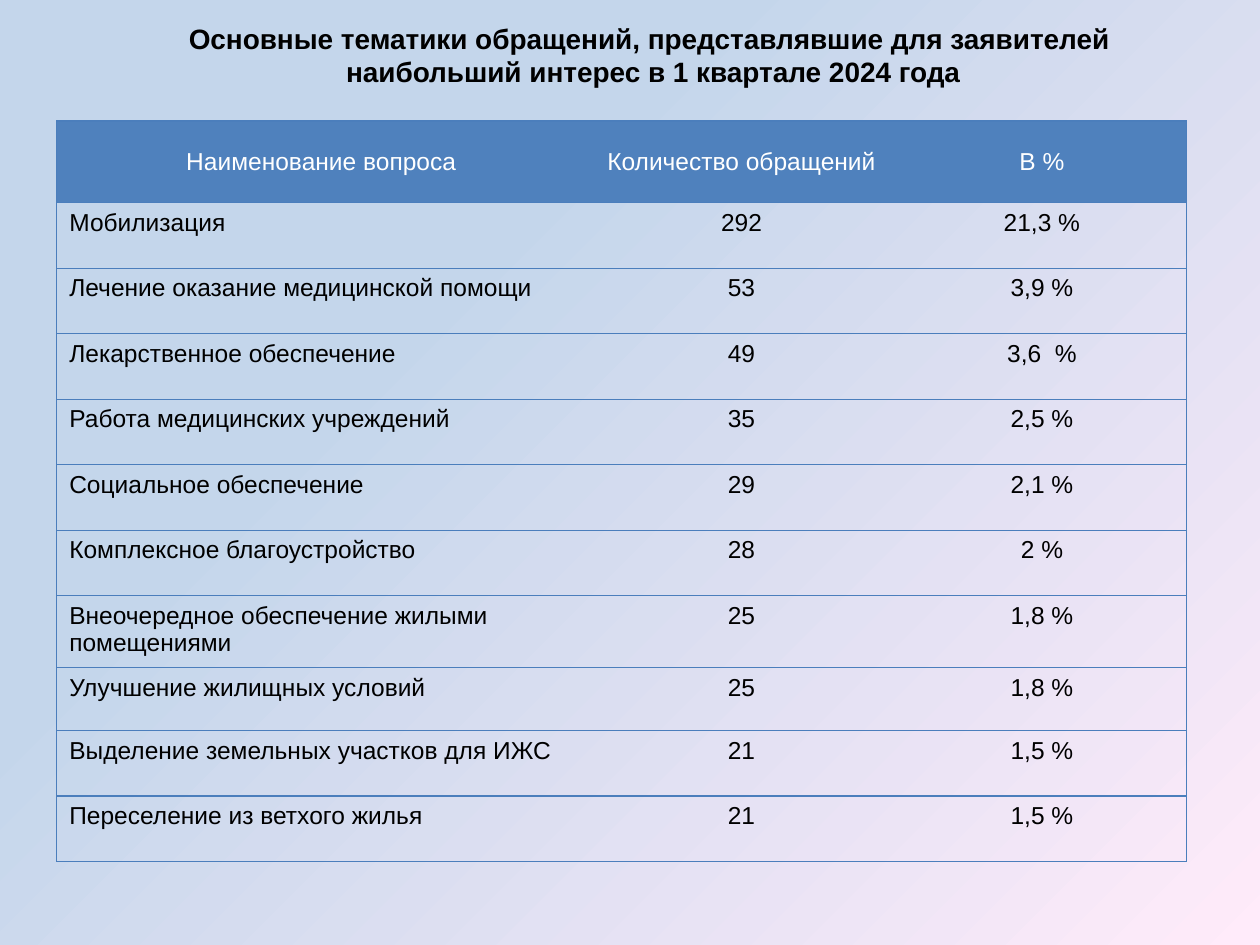
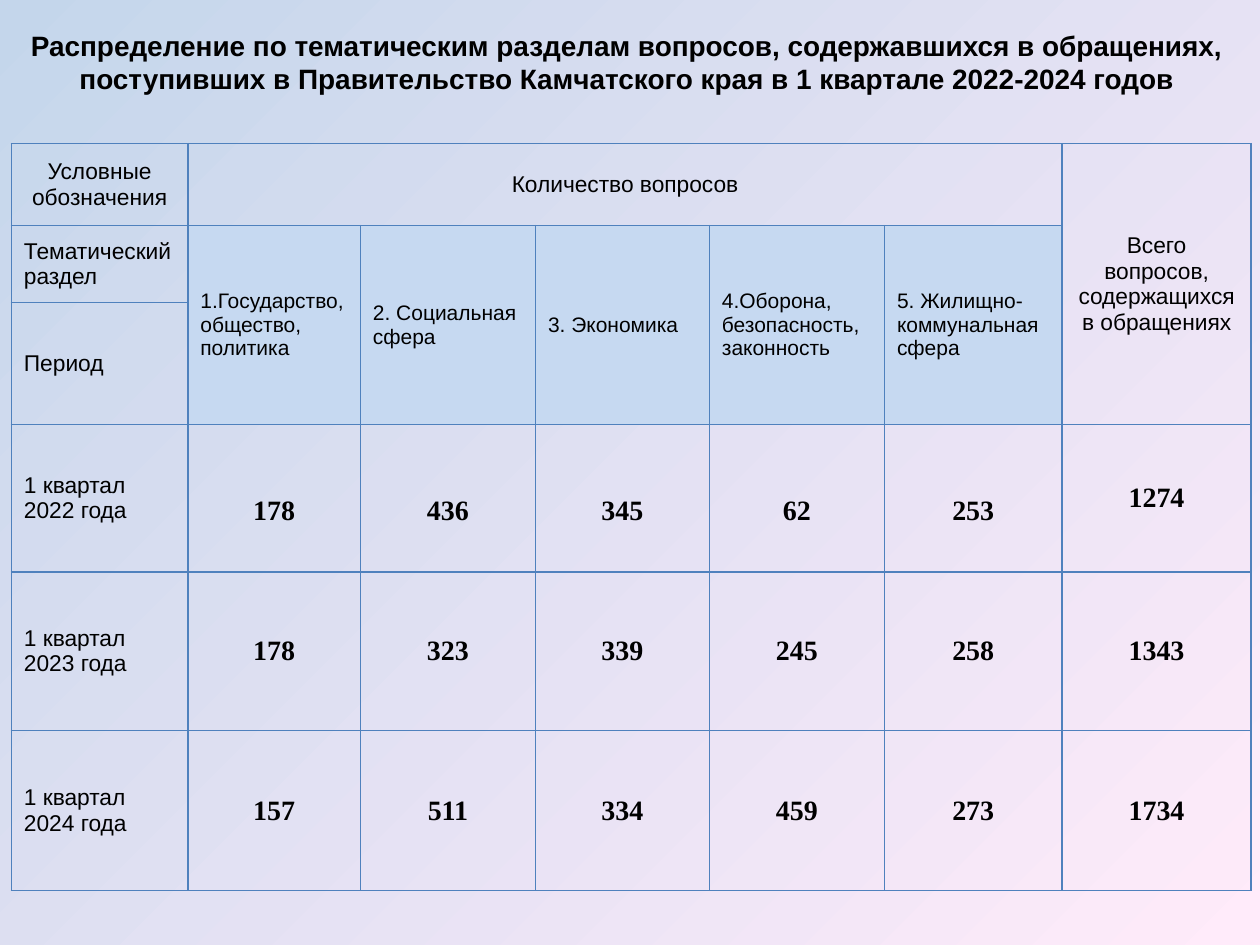
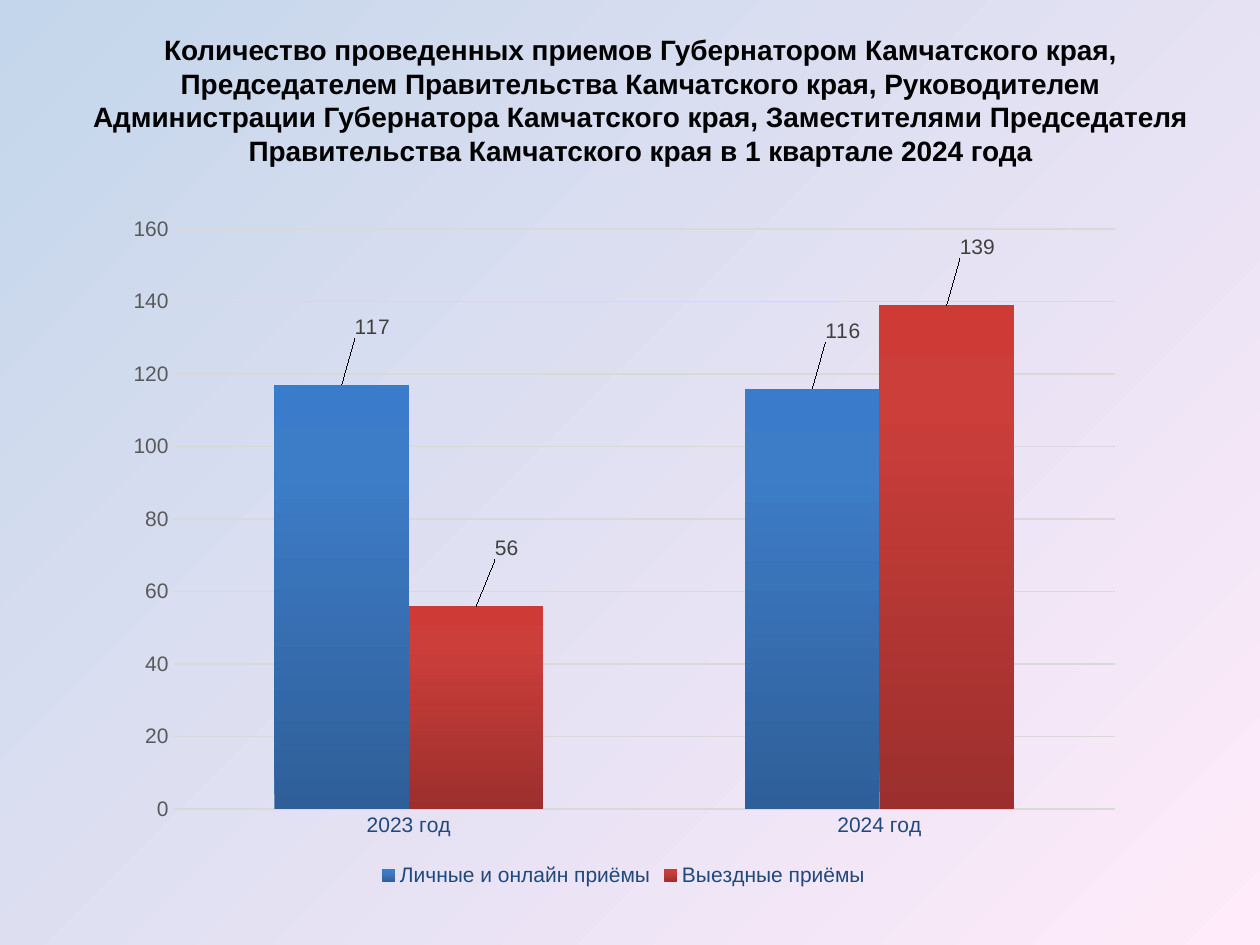
from pptx import Presentation
from pptx.chart.data import CategoryChartData
from pptx.dml.color import RGBColor
from pptx.enum.chart import XL_CHART_TYPE, XL_LABEL_POSITION, XL_LEGEND_POSITION, XL_TICK_MARK
from pptx.enum.text import MSO_ANCHOR, PP_ALIGN
from pptx.oxml import parse_xml
from pptx.oxml.ns import nsdecls, qn
from pptx.util import Inches, Pt

BLACK = RGBColor(0, 0, 0)
WHITE = RGBColor(255, 255, 255)
SKY = RGBColor(0xC4, 0xD6, 0xEB)
PINK = RGBColor(0xFF, 0xEB, 0xFA)
BLUE = RGBColor(0x4F, 0x81, 0xBD)
EDGE = RGBColor(0x4B, 0x7E, 0xBC)
PALE = RGBColor(0xC6, 0xD9, 0xF1)
NAVY = RGBColor(0x1F, 0x49, 0x7D)
GRAY = RGBColor(0x59, 0x59, 0x59)
DARK = RGBColor(0x40, 0x40, 0x40)
RULE = RGBColor(0xD9, 0xD9, 0xD9)
BLUES = [(0, RGBColor(0x2F, 0x5F, 0x99)), (80, RGBColor(0x3D, 0x7C, 0xC7)),
         (100, RGBColor(0x3A, 0x7C, 0xCB))]
REDS = [(0, RGBColor(0x9C, 0x2F, 0x2D)), (80, RGBColor(0xCB, 0x3E, 0x3A)),
        (100, RGBColor(0xCE, 0x3B, 0x37))]

SANS, SERIF = "Arial", "Times New Roman"
LEFT, MID = PP_ALIGN.LEFT, PP_ALIGN.CENTER
TOP, CORE = MSO_ANCHOR.TOP, MSO_ANCHOR.MIDDLE

# The slide is a grid of 100 columns by 75 rows
STEP = Inches(0.1)


def unit(count):
    return round(count * STEP)


def fit(item, **vals):
    for key, val in vals.items():
        setattr(item, key, val)


def ink(font, size, color=BLACK, bold=False, name=SANS):
    fit(font, size=Pt(size), bold=bold, name=name)
    font.color.rgb = color


def fade(root, fill, stops, angle):
    """Fill with a gradient of (percent, colour) stops."""
    fill.gradient()
    fill.gradient_angle = angle
    band = root.find(".//" + qn("a:gsLst"))
    band[:] = [parse_xml(f'<a:gs {nsdecls("a")} pos="{pos * 1000}">'
                         f'<a:srgbClr val="{color}"/></a:gs>') for pos, color in stops]


def place(node, index, **vals):
    """Give a chart part a manual layout."""
    for old in node.findall(qn("c:layout")):
        node.remove(old)
    body = "".join(f'<c:{key} val="{val}"/>' for key, val in vals.items())
    node.insert(index, parse_xml(f'<c:layout {nsdecls("c")}><c:manualLayout>{body}'
                                 '</c:manualLayout></c:layout>'))


class Deck:
    def __init__(self):
        self.prs = Presentation()
        fit(self.prs, slide_width=unit(100), slide_height=unit(75))
        self.slide = None

    def page(self, start=0):
        self.slide = self.prs.slides.add_slide(self.prs.slide_layouts[6])
        fade(self.slide.element, self.slide.background.fill,
             [(start, SKY), (100, PINK)], 315)

    def title(self, at, text, anchor=TOP):
        frame = self.slide.shapes.add_textbox(*map(unit, at)).text_frame
        fit(frame, word_wrap=True, vertical_anchor=anchor)
        para = frame.paragraphs[0]
        para.alignment = MID
        for num, line in enumerate(text.split("\n")):
            if num:
                para.add_line_break()
            run = para.add_run()
            run.text = line
            ink(run.font, 16, bold=True)

    def table(self, left, top, cols, rows, color, width, inner=True):
        """Add an unfilled table; inner tells if columns are ruled off."""
        table = self.slide.shapes.add_table(
            len(rows), len(cols), *map(unit, (left, top, sum(cols), sum(rows)))).table
        fit(table, first_row=False, horz_banding=False)
        for col, size in zip(table.columns, cols):
            col.width = unit(size)
        for row, size in zip(table.rows, rows):
            row.height = unit(size)
            for num, cell in enumerate(row.cells):
                cell.fill.background()
                shown = {"L": inner or num == 0, "R": inner or num == len(cols) - 1,
                         "T": True, "B": True}
                self.edges(cell, shown, color, width)
        return table

    def edges(self, cell, shown, color, width):
        props = cell._tc.get_or_add_tcPr()
        for spot, (side, seen) in enumerate(shown.items()):
            paint = (f'<a:solidFill><a:srgbClr val="{color}"/></a:solidFill>'
                     if seen else "<a:noFill/>")
            props.insert(spot, parse_xml(f'<a:ln{side} {nsdecls("a")} w="{Pt(width)}">'
                                         f'{paint}</a:ln{side}>'))

    def cell(self, cell, text, size, align=MID, anchor=CORE, fill=None, **look):
        cell.text = text
        cell.vertical_anchor = anchor
        para = cell.text_frame.paragraphs[0]
        para.alignment = align
        ink(para.runs[0].font, size, **look)
        if fill is not None:
            cell.fill.solid()
            cell.fill.fore_color.rgb = fill

    def chart(self, at, cats, series):
        data = CategoryChartData()
        data.categories = cats
        for name, vals, _ in series:
            data.add_series(name, vals)
        chart = self.slide.shapes.add_chart(
            XL_CHART_TYPE.COLUMN_CLUSTERED, *map(unit, at), data).chart
        fit(chart, has_title=False, has_legend=True)
        fit(chart.legend, position=XL_LEGEND_POSITION.BOTTOM, include_in_layout=False)
        ink(chart.font, 10)
        ink(chart.legend.font, 12, NAVY)
        place(chart.element.find(".//" + qn("c:plotArea")), 0, layoutTarget="inner",
              xMode="edge", yMode="edge", x=0.06, y=0.04, w=0.92, h=0.84)
        plot = chart.plots[0]
        fit(plot, gap_width=150, overlap=0, vary_by_categories=False)
        self.axes(chart)
        for ser, (_, vals, stops) in zip(plot.series, series):
            self.bars(ser, len(vals), stops)

    def axes(self, chart):
        cat, val = chart.category_axis, chart.value_axis
        for axis, color in ((cat, NAVY), (val, GRAY)):
            fit(axis, major_tick_mark=XL_TICK_MARK.NONE, minor_tick_mark=XL_TICK_MARK.NONE)
            ink(axis.tick_labels.font, 12, color)
        fit(val, minimum_scale=0, maximum_scale=160, major_unit=20)
        val.format.line.fill.background()
        for line, width in ((cat.format.line, 1), (val.major_gridlines.format.line, 0.75)):
            line.color.rgb = RULE
            line.width = Pt(width)

    def bars(self, ser, count, stops):
        fade(ser._element, ser.format.fill, stops, 90)
        ser.invert_if_negative = False
        for num in range(count):
            label = ser.points[num].data_label
            ink(label.font, 12, DARK)
            label.position = XL_LABEL_POSITION.OUTSIDE_END
        # Labels float above and to the right of their bars
        for node in ser._element.iter(qn("c:dLbl")):
            place(node, 1, x=0.03, y=-0.06)


def topics(deck):
    deck.page(start=33)
    deck.title((10.3, 1.2, 83.1, 6.4),
               "Основные тематики обращений, представлявшие для заявителей \n"
               "наибольший интерес в 1 квартале 2024 года")
    head = ("Наименование вопроса", "Количество обращений", "В %")
    rows = [
        ("Мобилизация", "292", "21,3 %"),
        ("Лечение оказание медицинской помощи", "53", "3,9 %"),
        ("Лекарственное обеспечение", "49", "3,6  %"),
        ("Работа медицинских учреждений", "35", "2,5 %"),
        ("Социальное обеспечение", "29", "2,1 %"),
        ("Комплексное благоустройство", "28", "2 %"),
        ("Внеочередное обеспечение жилыми помещениями", "25", "1,8 %"),
        ("Улучшение жилищных условий", "25", "1,8 %"),
        ("Выделение земельных участков для ИЖС", "21", "1,5 %"),
        ("Переселение из ветхого жилья", "21", "1,5 %"),
    ]
    sizes = [6.5] + [5.2] * 6 + [5.7, 5] + [5.2] * 2
    table = deck.table(4.5, 9.6, (42, 24.7, 23), sizes, EDGE, 0.75, inner=False)
    for col, text in enumerate(head):
        deck.cell(table.cell(0, col), text, 14, fill=BLUE, color=WHITE)
    for num, row in enumerate(rows, 1):
        for col, text in enumerate(row):
            deck.cell(table.cell(num, col), text, 14, MID if col else LEFT, TOP)


def themes(deck):
    deck.page()
    deck.title((-0.7, -3, 100.9, 15.8),
               "Распределение по тематическим разделам вопросов, содержавшихся в обращениях, "
               "поступивших в Правительство Камчатского края в 1 квартале 2022-2024 годов", CORE)
    table = deck.table(0.9, 11.4, (14, 13.7, 13.9, 13.8, 13.9, 14.1, 15),
                       (6.5, 6.1, 9.7, 11.7, 12.6, 12.7), BLUE, 1)
    # Heading cells
    table.cell(0, 1).merge(table.cell(0, 5))
    table.cell(0, 6).merge(table.cell(2, 6))
    for col, text in ((0, "Условные обозначения"), (1, "Количество вопросов"),
                      (6, "Всего вопросов, содержащихся в обращениях")):
        deck.cell(table.cell(0, col), text, 13)
    parts = ("1.Государство, общество, политика", "2. Социальная сфера", "3. Экономика",
             "4.Оборона, безопасность, законность", "5. Жилищно-коммунальная сфера")
    for col, text in enumerate(parts, 1):
        table.cell(1, col).merge(table.cell(2, col))
        deck.cell(table.cell(1, col), text, 12, LEFT, fill=PALE)
    # Row names and counts
    names = ["Тематический раздел", "Период"]
    names += [f"1 квартал {year} года" for year in (2022, 2023, 2024)]
    for row, text in enumerate(names, 1):
        deck.cell(table.cell(row, 0), text, 13, LEFT)
    counts = ((178, 436, 345, 62, 253, 1274),
              (178, 323, 339, 245, 258, 1343),
              (157, 511, 334, 459, 273, 1734))
    for row, vals in enumerate(counts, 3):
        for col, val in enumerate(vals, 1):
            low = row == 3 and col < 6
            cell = table.cell(row, col)
            deck.cell(cell, str(val), 16, anchor=TOP if low else CORE, bold=True, name=SERIF)
            if low:
                cell.margin_top = unit(5.6)


def visits(deck):
    deck.page()
    deck.title((5, 2.1, 91.7, 11.8),
               "Количество проведенных приемов Губернатором Камчатского края, "
               "Председателем Правительства Камчатского края, Руководителем "
               "Администрации Губернатора Камчатского края, Заместителями Председателя "
               "Правительства Камчатского края в 1 квартале 2024 года")
    deck.chart((8.9, 16, 81.2, 54.8), ("2023 год", "2024 год"),
               (("Личные и онлайн приёмы", (117, 116), BLUES),
                ("Выездные приёмы", (56, 139), REDS)))


def main():
    deck = Deck()
    for build in (topics, themes, visits):
        build(deck)
    deck.prs.save("out.pptx")


if __name__ == "__main__":
    main()
